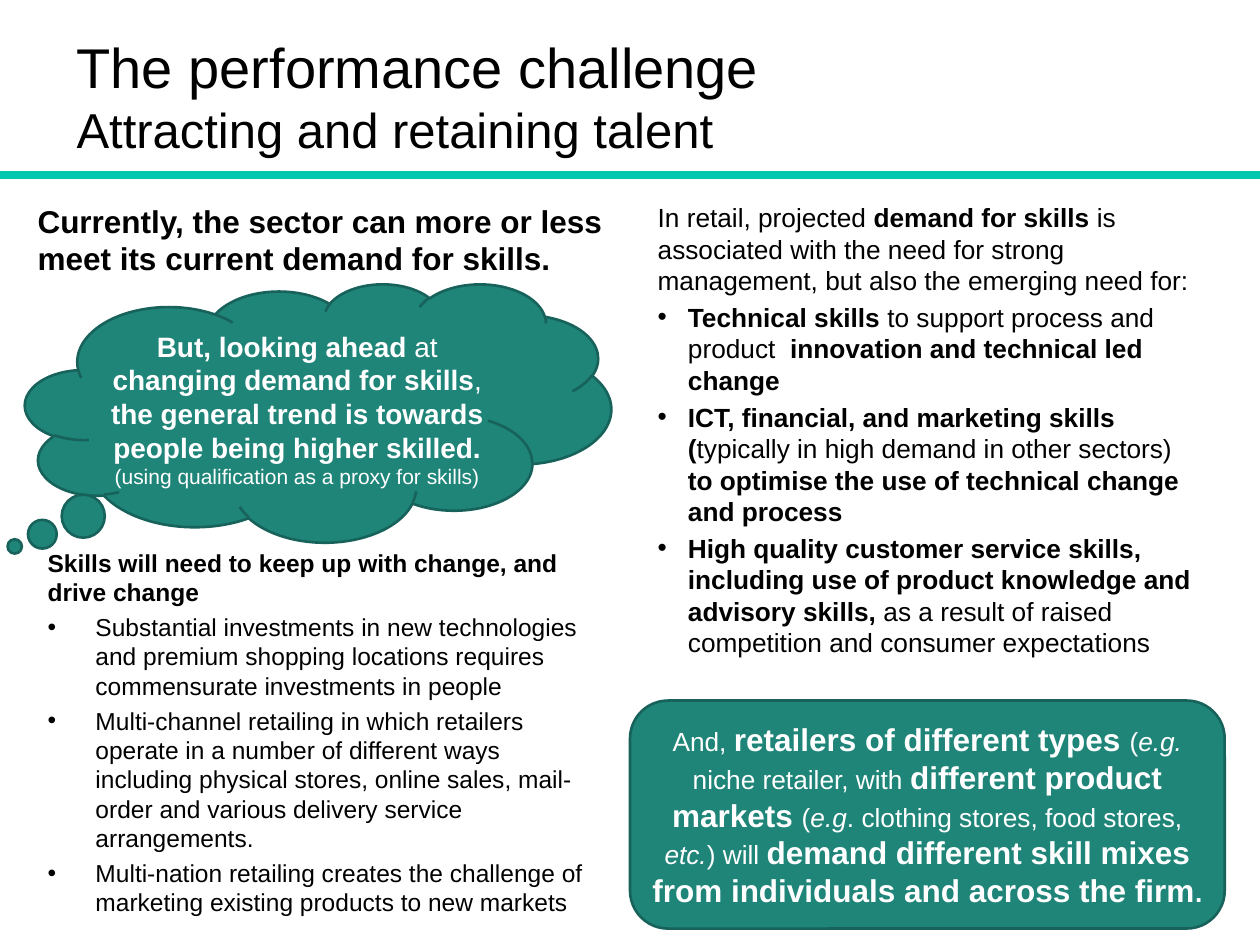
from dataclasses import dataclass
from typing import Optional

from lxml.etree import SubElement
from pptx import Presentation
from pptx.dml.color import RGBColor
from pptx.enum.shapes import MSO_CONNECTOR as Link, MSO_SHAPE as Kind
from pptx.enum.text import MSO_ANCHOR as Anchor, PP_ALIGN as Align
from pptx.oxml.ns import qn
from pptx.util import Inches, Pt

BLACK, WHITE = "000000", "FFFFFF"
TEAL, EDGE, MINT = "1F8579", "17625A", "00C8AF"


@dataclass
class Run:
    text: str
    bold: bool = False
    size: Optional[float] = None
    ital: bool = False


@dataclass
class Para:
    runs: list[Run]
    indent: float = 0


@dataclass
class Block:
    box: tuple[float, float, float, float]
    paras: list[Para]
    size: float
    color: str = BLACK
    inset: tuple[float, float, float, float] = (0.1, 0.05, 0.1, 0.05)
    anchor: Anchor = Anchor.TOP
    align: Align = Align.LEFT
    gap: float = 0


@dataclass
class Panel:
    kind: Kind
    block: Block
    adjust: tuple[float, ...] = ()


def rgb(code: str) -> RGBColor:
    """Turn a hex string into a colour."""
    return RGBColor.from_string(code)


def bullet(para, indent: float) -> None:
    """Give a paragraph a round bullet with a hanging indent."""
    props = para._p.get_or_add_pPr()
    props.set("marL", str(Inches(indent)))
    props.set("indent", str(-Inches(indent)))
    SubElement(props, qn("a:buFont")).set("typeface", "Arial")
    SubElement(props, qn("a:buChar")).set("char", "•")


def write(frame, block: Block) -> None:
    """Fill a text frame with the paragraphs of a block."""
    frame.word_wrap = True
    frame.vertical_anchor = block.anchor
    (frame.margin_left, frame.margin_top,
     frame.margin_right, frame.margin_bottom) = map(Inches, block.inset)
    for i, item in enumerate(block.paras):
        para = frame.paragraphs[0] if i == 0 else frame.add_paragraph()
        if item.indent:
            bullet(para, item.indent)
        para.alignment = block.align
        para.space_before = Pt(block.gap if i else 0)
        for part in item.runs:
            if part.text == "\n":
                para.add_line_break()
                continue
            run = para.add_run()
            run.text = part.text
            font = run.font
            font.name = "Arial"
            font.size = Pt(part.size or block.size)
            font.bold, font.italic = part.bold, part.ital
            font.color.rgb = rgb(block.color)


def add_text(slide, block: Block) -> None:
    """Add a plain text box."""
    write(slide.shapes.add_textbox(*map(Inches, block.box)).text_frame, block)


def add_panel(slide, panel: Panel) -> None:
    """Add a filled shape with its text."""
    shape = slide.shapes.add_shape(panel.kind, *map(Inches, panel.block.box))
    shape.shadow.inherit = False
    for i, value in enumerate(panel.adjust):
        shape.adjustments[i] = value
    shape.fill.solid()
    shape.fill.fore_color.rgb = rgb(TEAL)
    shape.line.color.rgb = rgb(EDGE)
    shape.line.width = Pt(1.5)
    write(shape.text_frame, panel.block)


def add_rule(slide, top: float) -> None:
    """Draw the rule below the title across the slide."""
    rule = slide.shapes.add_connector(
        Link.STRAIGHT, Inches(0), Inches(top), Inches(10), Inches(top))
    rule.line.color.rgb = rgb(MINT)
    rule.line.width = Pt(5)
    SubElement(rule._element.spPr, qn("a:effectLst"))


TITLE = Block((0.51, 0.13, 6.92, 1.25), [Para([
    Run("The performance challenge"), Run("\n"),
    Run("Attracting and retaining talent", size=28),
])], 32, anchor=Anchor.MIDDLE)

NEEDS = Block((5.16, 1.55, 4.41, 3.86), [
    Para([Run("In retail, projected "), Run("demand for skills", True),
          Run(" is associated with the need for strong management, "
              "but also the emerging need for:")]),
    Para([Run("Technical skills ", True),
          Run("to support process and product  "),
          Run("innovation and technical led change", True)], 0.24),
    Para([Run("ICT, financial, and marketing skills (", True),
          Run("typically in high demand in other sectors) "),
          Run("to optimise the use of technical change and process", True)],
         0.24),
    Para([Run("High quality customer service skills, including use of "
              "product knowledge and advisory skills, ", True),
          Run("as a result of raised competition and consumer "
              "expectations")], 0.24),
], 15, inset=(0.06, 0.05, 0.04, 0.05), gap=3)

CLOUD = Panel(Kind.CLOUD_CALLOUT, Block((0.2, 2.25, 4.65, 2.05), [
    Para([Run("But, looking ahead ", True), Run("at "),
          Run("changing demand for skills", True), Run(", "),
          Run("the general trend is towards people being higher skilled.",
              True)]),
    Para([Run("(using qualification as a proxy for skills)", size=12)]),
], 16, WHITE, (0, 0.04, 0, 0), Anchor.MIDDLE, Align.CENTER), (-0.518, 0.518))

MIX = Panel(Kind.ROUNDED_RECTANGLE, Block((5, 5.56, 4.72, 1.81), [Para([
    Run("And, "), Run("retailers of different types ", True, 18),
    Run("("), Run("e.g.", ital=True), Run(" niche retailer, with "),
    Run("different product markets ", True, 18),
    Run("("), Run("e.g", ital=True),
    Run(". clothing stores, food stores, "), Run("etc.", ital=True),
    Run(") will "),
    Run("demand different skill mixes from individuals and across the firm",
        True, 18),
    Run(".", True),
])], 15, WHITE, (0.06, 0.05, 0.06, 0.05), Anchor.MIDDLE, Align.CENTER))

CHANGE = Block((0.28, 4.3, 4.57, 3.07), [
    Para([Run("Skills will need to keep up with change, and drive change",
              True)]),
    Para([Run("Substantial investments in new technologies and premium "
              "shopping locations requires commensurate investments in "
              "people")], 0.38),
    Para([Run("Multi-channel retailing in which retailers operate in a "
              "number of different ways including physical stores, online "
              "sales, mail-order and various delivery service "
              "arrangements.")], 0.38),
    Para([Run("Multi-nation retailing creates the challenge of marketing "
              "existing products to new markets")], 0.38),
], 14, gap=3)

TODAY = Block((0.2, 1.55, 4.8, 0.71), [Para([
    Run("Currently, the sector can more or less meet its current demand "
        "for skills.", True)])], 18)


def main() -> None:
    """Build the slide and save it."""
    deck = Presentation()
    deck.slide_width, deck.slide_height = Inches(10), Inches(7.5)
    slide = deck.slides.add_slide(deck.slide_layouts[6])
    add_rule(slide, 1.39)
    for block in (TITLE, NEEDS):
        add_text(slide, block)
    for panel in (CLOUD, MIX):
        add_panel(slide, panel)
    for block in (CHANGE, TODAY):
        add_text(slide, block)
    deck.save("out.pptx")


if __name__ == "__main__":
    main()
